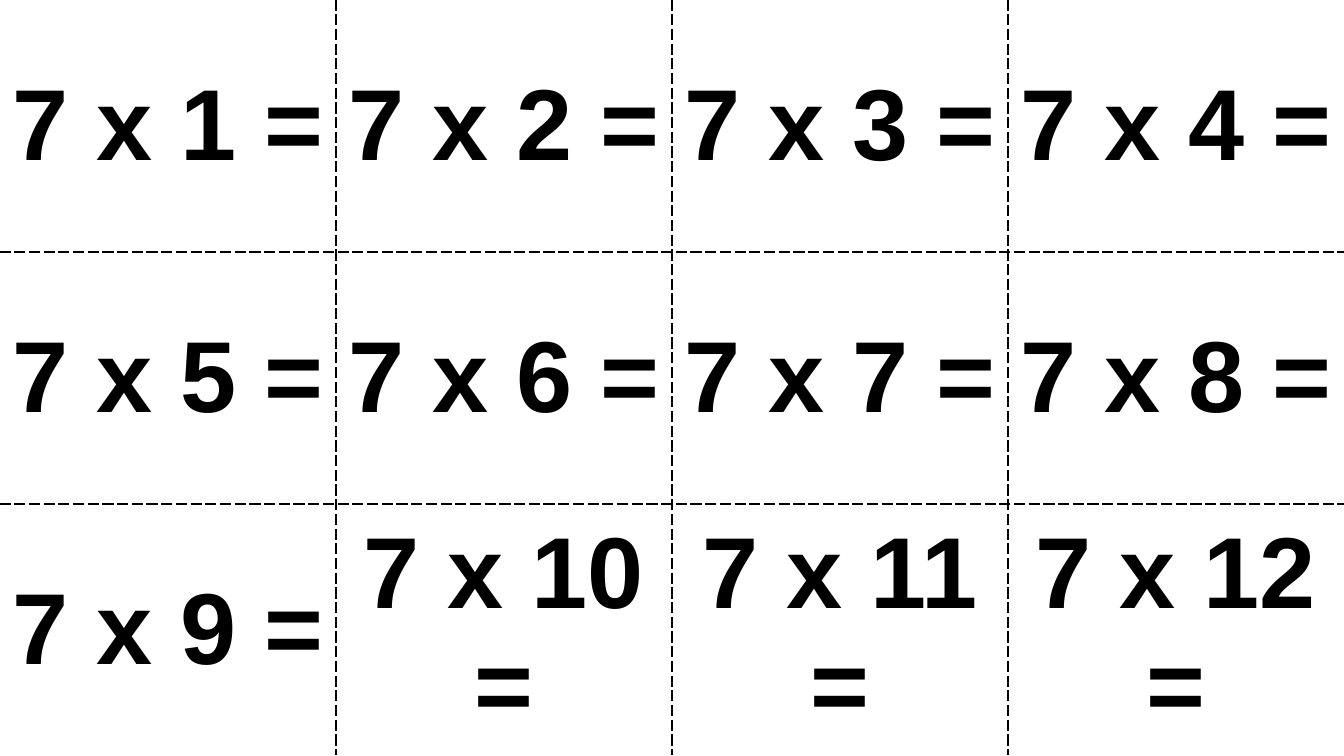
from lxml import etree
from pptx import Presentation
from pptx import util as u
from pptx.dml.color import RGBColor
from pptx.enum import text
from pptx.oxml.ns import qn

COLORS = {"ink": "000000", "paper": "FFFFFF"}
FACTOR = 7
ROWS, COLS = 3, 4
WIDTH, HEIGHT = u.Inches(13.33), u.Inches(7.5)


def rgb(name):
    return RGBColor.from_string(COLORS[name])


def add_border(cell, side, cut):
    ln = etree.SubElement(cell._tc.get_or_add_tcPr(), qn(f"a:ln{side}"), w=str(u.Pt(1)))
    fill = etree.SubElement(ln, qn("a:solidFill"))
    etree.SubElement(fill, qn("a:srgbClr"), val=COLORS["ink" if cut else "paper"])
    etree.SubElement(ln, qn("a:prstDash"), val="dash" if cut else "solid")


def fill_card(cell, wording, cuts):
    for side, cut in cuts.items():
        add_border(cell, side, cut)
    cell.fill.solid()
    cell.fill.fore_color.rgb = rgb("paper")
    cell.vertical_anchor = text.MSO_ANCHOR.MIDDLE
    p = cell.text_frame.paragraphs[0]
    p.alignment = text.PP_ALIGN.CENTER
    r = p.add_run()
    r.text = wording
    r.font.name = "Arial"
    r.font.size = u.Pt(72)
    r.font.bold = True
    r.font.color.rgb = rgb("ink")


def add_cards(slide):
    table = slide.shapes.add_table(ROWS, COLS, 0, 0, WIDTH, HEIGHT).table
    table.first_row = False
    table.horz_banding = False
    for row in range(ROWS):
        for col in range(COLS):
            cuts = {"L": col > 0, "R": col < COLS - 1,
                    "T": row > 0, "B": row < ROWS - 1}
            number = row * COLS + col + 1
            fill_card(table.cell(row, col), f"{FACTOR} x {number} =", cuts)


def main():
    prs = Presentation()
    prs.slide_width, prs.slide_height = WIDTH, HEIGHT
    s = prs.slides.add_slide(prs.slide_layouts[6])
    add_cards(s)
    prs.save("out.pptx")


if __name__ == "__main__":
    main()
